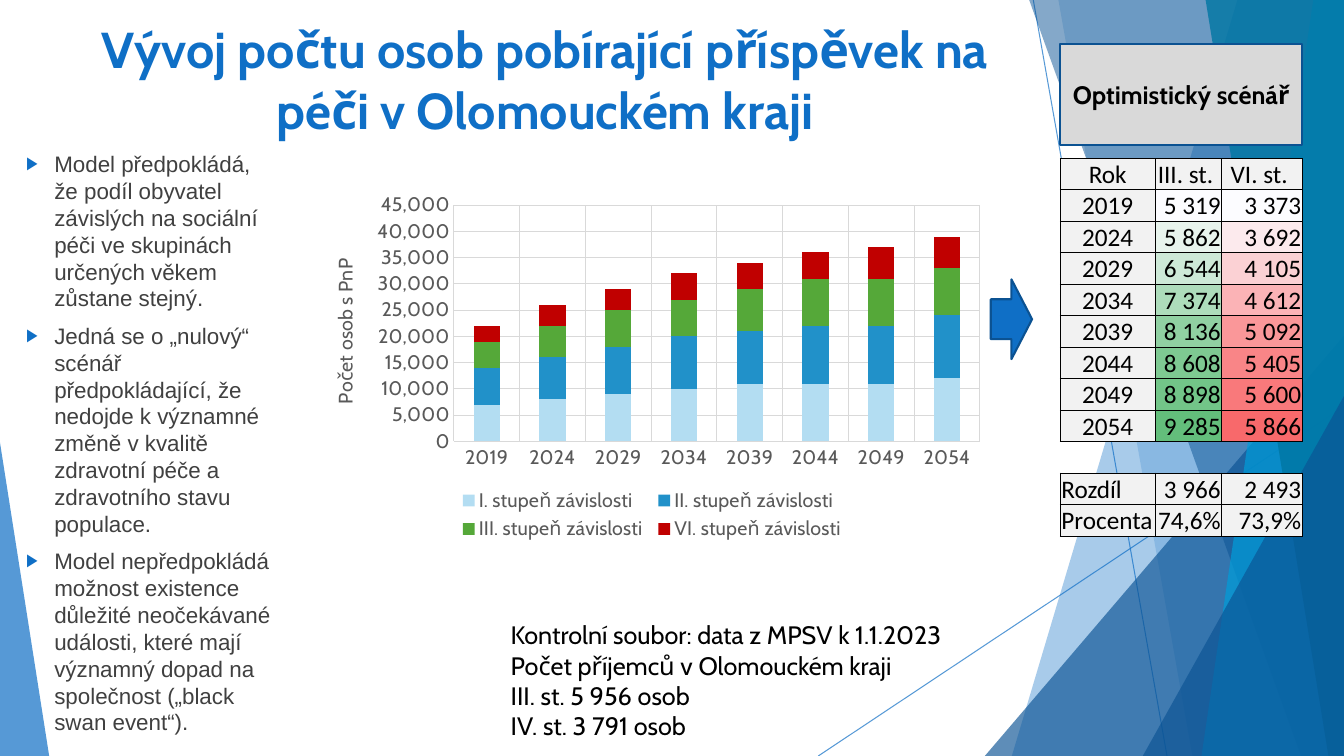
from dataclasses import dataclass
from math import ceil

from lxml.etree import SubElement
from pptx import Presentation
from pptx.chart.data import CategoryChartData
from pptx.dml.color import RGBColor
from pptx.enum.chart import XL_CHART_TYPE as ChartType, XL_LEGEND_POSITION as LegendPosition
from pptx.enum.chart import XL_TICK_MARK as TickMark
from pptx.enum.shapes import MSO_CONNECTOR as Connector, MSO_SHAPE as Shape
from pptx.enum.text import MSO_ANCHOR as Anchor, MSO_AUTO_SIZE as AutoSize, PP_ALIGN as Align
from pptx.oxml.ns import qn
from pptx.util import Cm, Pt


@dataclass(frozen=True)
class Theme:
    blue: str = "0F6FC6"
    navy: str = "0B5394"
    outline: str = "0B5292"
    cyan: str = "009DD9"
    teal: str = "0076A3"
    white: str = "FFFFFF"
    black: str = "000000"
    body: str = "404040"
    axis: str = "595959"
    grid: str = "D9D9D9"
    cell: str = "F2F2F2"
    series: tuple = ("B3DDF2", "2191C9", "55A839", "C00000")
    scale_start: str = "FCFCFF"
    scale_ends: tuple = ("63BE7B", "F8696B")
    heading: str = "Cabin"
    text: str = "Arial"
    numbers: str = "Calibri"
    title_size: int = 36
    large_size: int = 18
    body_size: int = 16
    chart_size: int = 14


theme = Theme()


def paint(shape, fill=None, line=None, width=1.5, alpha=100):
    if fill:
        shape.fill.solid()
        shape.fill.fore_color.rgb = RGBColor.from_string(fill)
        shape.shadow.inherit = False
    if line:
        shape.line.color.rgb = RGBColor.from_string(line)
        shape.line.width = Pt(width)
    else:
        shape.line.fill.background()
    properties = shape._element.spPr
    if alpha < 100:
        color = properties.find(".//" + qn("a:srgbClr"))
        SubElement(color, qn("a:alpha")).set("val", str(alpha * 1000))
    if not fill:
        SubElement(properties, qn("a:effectLst"))


def style(font, name, size, color, bold=False):
    font.name, font.size, font.bold = name, Pt(size), bold
    font.color.rgb = RGBColor.from_string(color)


presentation = Presentation()
presentation.slide_width, presentation.slide_height = Cm(33.87), Cm(19.05)
slide = presentation.slides.add_slide(presentation.slide_layouts[5])
shapes = slide.shapes

for ends in [(26.04, 0, 29.41, 19.05), (33.87, 10.24, 20.62, 19.05)]:
    ray = shapes.add_connector(Connector.STRAIGHT, *map(Cm, ends))
    paint(ray, line=theme.blue, width=0.75, alpha=70)

facets = [
    ("wedge", (31.19, 25.5), theme.blue, 36),
    ("wedge", (26.67, 30.05), theme.blue, 20),
    ("triangle", (24.82, 8.46, 9.05, 10.59, 1), theme.navy, 66),
    ("wedge", (25.93, 32.79), theme.navy, 50),
    ("wedge", (33.1, 30.28), theme.cyan, 70),
    ("wedge", (30.38, 33.48), theme.teal, 80),
    ("triangle", (28.8, 9.98, 5.07, 9.07, 1), theme.navy, 66),
    ("triangle", (0, 11.15, 1.24, 7.9, 0), theme.blue, 70),
]
for kind, numbers, color, alpha in facets:
    if kind == "wedge":
        top, bottom = numbers
        outline = shapes.build_freeform(Cm(top), Cm(-0.02))
        corners = [(33.87, -0.02), (33.87, 19.05), (bottom, 19.05)]
        outline.add_line_segments([(Cm(x), Cm(y)) for x, y in corners], close=True)
        facet = outline.convert_to_shape()
    else:
        *box, apex = numbers
        facet = shapes.add_shape(Shape.ISOSCELES_TRIANGLE, *map(Cm, box))
        facet.adjustments[0] = apex
    paint(facet, color, alpha=alpha)

strip = shapes.add_shape(Shape.RECTANGLE, Cm(11.66), Cm(1.85), Cm(13.82), Cm(0.33))
paint(strip, theme.white)

title = shapes.title
title.left, title.top, title.width, title.height = Cm(1.8), Cm(0.33), Cm(23.88), Cm(3.66)
title.text_frame.text = "Vývoj počtu osob pobírající příspěvek na péči v Olomouckém kraji"
title.text_frame.auto_size = AutoSize.NONE
title.text_frame.vertical_anchor = Anchor.TOP
heading = title.text_frame.paragraphs[0]
heading.alignment = Align.CENTER
style(heading.runs[0].font, theme.heading, theme.title_size, theme.blue, True)
shapes._spTree.append(title._element)

assumptions = shapes.add_textbox(Cm(0.41), Cm(3.66), Cm(6.88), Cm(10.01)).text_frame
assumptions.word_wrap = True
assumptions.text = "\n".join([
    "Model předpokládá, že podíl obyvatel závislých na sociální péči ve skupinách určených věkem zůstane stejný.",
    "Jedná se o „nulový“ scénář předpokládající, že nedojde k významné změně v kvalitě zdravotní péče a zdravotního stavu populace.",
    "Model nepředpokládá možnost existence důležité neočekávané události, které mají významný dopad na společnost („black swan event“).",
])
for paragraph in assumptions.paragraphs:
    paragraph.space_before = Pt(7.5)
    style(paragraph.runs[0].font, theme.text, theme.body_size, theme.body)
    properties = paragraph._p.get_or_add_pPr()
    properties.set("marL", str(Cm(0.71)))
    properties.set("indent", str(Cm(-0.71)))
    bullet_color = SubElement(properties, qn("a:buClr"))
    SubElement(bullet_color, qn("a:srgbClr")).set("val", theme.blue)
    SubElement(properties, qn("a:buSzPct")).set("val", "80000")
    SubElement(properties, qn("a:buFont")).set("typeface", theme.text)
    SubElement(properties, qn("a:buChar")).set("char", "▶")

arrow = shapes.add_shape(Shape.RIGHT_ARROW, Cm(24.97), Cm(7.04), Cm(1.04), Cm(2.01))
paint(arrow, theme.blue, theme.outline)

years = [str(year) for year in range(2019, 2055, 5)]
data = CategoryChartData(number_format="#,##0")
data.categories = years
for name, values in {
    "I. stupeň závislosti": [7000, 8000, 9000, 10000, 11000, 11000, 11000, 12000],
    "II. stupeň závislosti": [7000, 8000, 9000, 10000, 10000, 11000, 11000, 12000],
    "III. stupeň závislosti": [5000, 6000, 7000, 7000, 8000, 9000, 9000, 9000],
    "VI. stupeň závislosti": [3000, 4000, 4000, 5000, 5000, 5000, 6000, 6000],
}.items():
    data.add_series(name, values)
chart = shapes.add_chart(
    ChartType.COLUMN_STACKED, Cm(7.82), Cm(4.72), Cm(17.22), Cm(9.02), data).chart
style(chart.font, theme.heading, theme.chart_size, theme.axis)
chart.has_title = False
plot = chart.plots[0]
plot.gap_width, plot.overlap, plot.vary_by_categories = 150, 100, False
for series, color in zip(plot.series, theme.series):
    series.format.fill.solid()
    series.format.fill.fore_color.rgb = RGBColor.from_string(color)

years_axis, people_axis = chart.category_axis, chart.value_axis
for axis in (years_axis, people_axis):
    axis.major_tick_mark = axis.minor_tick_mark = TickMark.NONE
    axis.has_major_gridlines = True
    style(axis.tick_labels.font, theme.heading, theme.chart_size, theme.axis)
    for line in (axis.format.line, axis.major_gridlines.format.line):
        line.color.rgb = RGBColor.from_string(theme.grid)
        line.width = Pt(0.75)
people_axis.format.line.fill.background()
people_axis.minimum_scale, people_axis.maximum_scale, people_axis.major_unit = 0, 45000, 5000
people_axis.tick_labels.number_format = "#,##0"
people_axis.tick_labels.number_format_is_linked = False
people_axis.axis_title.text_frame.text = "Počet osob s PnP"
axis_run = people_axis.axis_title.text_frame.paragraphs[0].runs[0]
style(axis_run.font, theme.heading, theme.chart_size, theme.axis)

chart.has_legend = True
legend = chart.legend
legend.position, legend.include_in_layout = LegendPosition.BOTTOM, False
style(legend.font, theme.heading, theme.chart_size, theme.axis)
plot_area = chart._chartSpace.find(".//" + qn("c:plotArea"))
for parent, index, target, box in [
    (plot_area, 0, "inner", (0.21, 0.05, 0.77, 0.66)),
    (legend._element, 1, None, (0.21, 0.83, 0.58, 0.17)),
]:
    for layout in parent.findall(qn("c:layout")):
        parent.remove(layout)
    layout = parent.makeelement(qn("c:layout"))
    parent.insert(index, layout)
    manual = SubElement(layout, qn("c:manualLayout"))
    if target:
        SubElement(manual, qn("c:layoutTarget")).set("val", target)
    for tag in ("xMode", "yMode"):
        SubElement(manual, qn("c:" + tag)).set("val", "edge")
    for tag, value in zip("xywh", box):
        SubElement(manual, qn("c:" + tag)).set("val", str(value))

third = [5319, 5862, 6544, 7374, 8136, 8608, 8898, 9285]
fourth = [3373, 3692, 4105, 4612, 5092, 5405, 5600, 5866]
rows = [("Rok", "III. st. ", "VI. st. ")]
rows += [(year, *(f"{n:,}".replace(",", " ") for n in pair)) for year, *pair in zip(years, third, fourth)]
rows += [("", "", ""), ("Rozdíl", "3 966", "2 493"), ("Procenta", "74,6%", "73,9%")]
table = shapes.add_table(len(rows), 3, Cm(26.72), Cm(3.99), Cm(6.1), Cm(9.36)).table
table.first_row = table.horz_banding = False
table._tbl.tblPr.find(qn("a:tableStyleId")).text = "{2D5ABB26-0587-4C30-8999-92F81FD0307C}"
for column, width in zip(table.columns, (2.39, 1.68, 2.03)):
    column.width = Cm(width)
start = RGBColor.from_string(theme.scale_start)
for i, row in enumerate(rows):
    table.rows[i].height = Cm(0.78)
    for j, text in enumerate(row):
        cell = table.cell(i, j)
        cell.text = text
        cell.vertical_anchor = Anchor.BOTTOM
        cell.margin_left = cell.margin_right = cell.margin_top = Cm(0.03)
        cell.margin_bottom = Cm(0)
        paragraph = cell.text_frame.paragraphs[0]
        style(paragraph.font, theme.numbers, theme.large_size, theme.black)
        for run in paragraph.runs:
            style(run.font, theme.numbers, theme.large_size, theme.black)
        centred = i == 0 or (j == 0 and i <= len(years))
        paragraph.alignment = Align.CENTER if centred else Align.RIGHT if j else Align.LEFT
        for side in ("lnL", "lnR", "lnT", "lnB") if text else ("lnT", "lnB"):
            border = SubElement(cell._tc.get_or_add_tcPr(), qn("a:" + side), w=str(Pt(0.5)))
            SubElement(SubElement(border, qn("a:solidFill")), qn("a:srgbClr")).set("val", theme.black)
        if not text:
            cell.fill.background()
            continue
        cell.fill.solid()
        cell.fill.fore_color.rgb = RGBColor.from_string(theme.cell)
        if j and 1 <= i <= len(years):
            values = (third, fourth)[j - 1]
            share = (values[i - 1] - values[0]) / (values[-1] - values[0])
            end = RGBColor.from_string(theme.scale_ends[j - 1])
            cell.fill.fore_color.rgb = RGBColor(*(ceil(a + (b - a) * share) for a, b in zip(start, end)))

control = shapes.add_textbox(Cm(12.62), Cm(15.49), Cm(12.32), Cm(4.11)).text_frame
control.word_wrap = False
control.auto_size = AutoSize.SHAPE_TO_FIT_TEXT
control.text = "\n".join([
    "Kontrolní soubor: data z MPSV k 1.1.2023", "Počet příjemců v Olomouckém kraji",
    "III. st. 5 956 osob", "IV. st. 3 791 osob"])
for paragraph in control.paragraphs:
    style(paragraph.runs[0].font, theme.heading, theme.large_size, theme.black)

scenario = shapes.add_shape(Shape.RECTANGLE, Cm(26.72), Cm(1.12), Cm(6.1), Cm(2.54))
paint(scenario, theme.grid, theme.outline)
scenario.text_frame.text = "Optimistický scénář"
scenario.text_frame.vertical_anchor = Anchor.MIDDLE
label = scenario.text_frame.paragraphs[0]
label.alignment = Align.CENTER
style(label.runs[0].font, theme.heading, theme.large_size, theme.black, True)

presentation.save("out.pptx")
